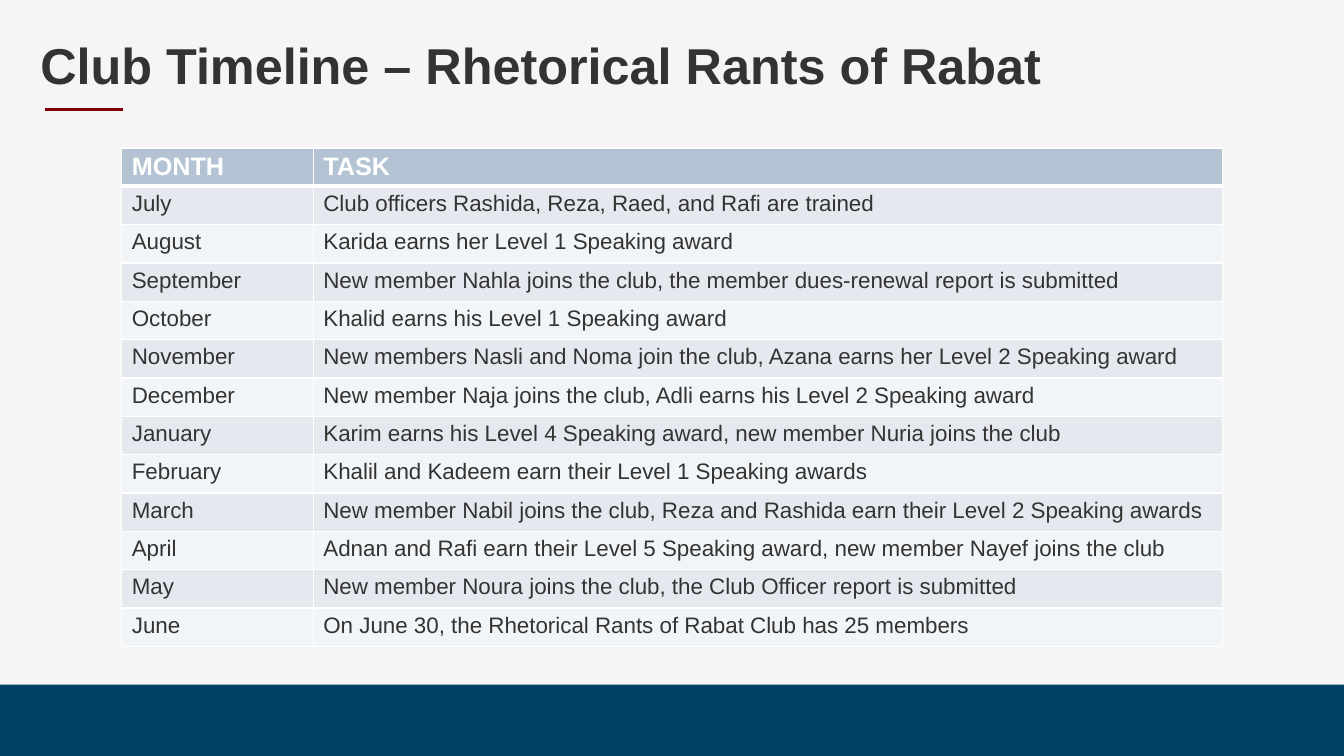
"""Build the club timeline slide."""
from lxml import etree
from pptx import Presentation
from pptx import util as u
from pptx.dml.color import RGBColor
from pptx.enum import shapes, text
from pptx.oxml import ns

PAPER = RGBColor(0xF5, 0xF5, 0xF5)
NAVY = RGBColor(0x00, 0x41, 0x65)
MAROON = RGBColor(0x80, 0x00, 0x00)
INK = RGBColor(0x33, 0x33, 0x33)
WHITE = RGBColor(0xFF, 0xFF, 0xFF)
STEEL = RGBColor(0xB3, 0xC3, 0xD3)
BANDS = RGBColor(0xF2, 0xF5, 0xF7), RGBColor(0xE5, 0xE9, 0xEF)

WIDE, HIGH = 960, 540
COLS = 136.8, 649.4
ROW = 27.4
TITLE = {"size": u.Pt(36), "bold": True, "color": INK}
HEAD = {"size": u.Pt(18), "bold": True, "color": WHITE}
BODY = {"size": u.Pt(16), "bold": False, "color": INK}

TASKS = [
    ("MONTH", "TASK"),
    ("July", "Club officers Rashida, Reza, Raed, and Rafi are trained"),
    ("August", "Karida earns her Level 1 Speaking award"),
    ("September", "New member Nahla joins the club, the member dues-renewal report is submitted"),
    ("October", "Khalid earns his Level 1 Speaking award"),
    ("November", "New members Nasli and Noma join the club, Azana earns her Level 2 Speaking award"),
    ("December", "New member Naja joins the club, Adli earns his Level 2 Speaking award"),
    ("January", "Karim earns his Level 4 Speaking award, new member Nuria joins the club"),
    ("February", "Khalil and Kadeem earn their Level 1 Speaking awards"),
    ("March", "New member Nabil joins the club, Reza and Rashida earn their Level 2 Speaking awards"),
    ("April", "Adnan and Rafi earn their Level 5 Speaking award, new member Nayef joins the club"),
    ("May", "New member Noura joins the club, the Club Officer report is submitted"),
    ("June", "On June 30, the Rhetorical Rants of Rabat Club has 25 members"),
]


def style(para, form):
    """Apply a dict of font values to a paragraph."""
    para.font.name = "Arial"
    for key, value in form.items():
        if key == "color":
            para.font.color.rgb = value
        else:
            setattr(para.font, key, value)


def add_bar(slide, top):
    """Fill the foot of the slide with a plain bar."""
    bar = slide.shapes.add_shape(shapes.MSO_SHAPE.RECTANGLE, 0, u.Pt(top),
                                 u.Pt(WIDE), u.Pt(HIGH - top))
    bar.shadow.inherit = False
    bar.fill.solid()
    bar.fill.fore_color.rgb = NAVY
    bar.line.fill.background()


def add_rule(slide, left, top, width):
    """Draw the short accent line under the title."""
    rule = slide.shapes.add_connector(
        shapes.MSO_CONNECTOR.STRAIGHT, u.Pt(left), u.Pt(top),
        u.Pt(left + width), u.Pt(top))
    rule.line.color.rgb = MAROON
    rule.line.width = u.Pt(2.25)
    etree.SubElement(rule._element.spPr, ns.qn("a:effectLst"))


def set_title(slide, words):
    """Place and format the title."""
    title = slide.shapes.title
    box = {"left": 21.6, "top": 23, "width": 917.3, "height": 51.1}
    for key, value in box.items():
        setattr(title, key, u.Pt(value))
    frame = title.text_frame
    frame.text = words
    frame.auto_size = text.MSO_AUTO_SIZE.NONE
    frame.vertical_anchor = text.MSO_ANCHOR.MIDDLE
    para = frame.paragraphs[0]
    para.alignment = text.PP_ALIGN.LEFT
    para.line_spacing = 0.9
    style(para, TITLE)


def add_edge(cell, side, width):
    """Add one white border to a cell."""
    props = cell._tc.get_or_add_tcPr()
    edge = etree.SubElement(props, ns.qn(f"a:ln{side}"), w=str(u.Pt(width)))
    fill = etree.SubElement(edge, ns.qn("a:solidFill"))
    etree.SubElement(fill, ns.qn("a:srgbClr"), val=str(WHITE))


def fill_cell(cell, words, row):
    """Write, border and fill one cell by its row number."""
    cell.text = words
    style(cell.text_frame.paragraphs[0], BODY if row else HEAD)
    thick = {"T": 1, "B": 0}
    for side in "LRTB":
        add_edge(cell, side, 3 if thick.get(side) == row else 1)
    cell.fill.solid()
    cell.fill.fore_color.rgb = BANDS[row % 2] if row else STEEL


def add_tasks(slide, left, top):
    """Add the table of months and tasks."""
    grid = slide.shapes.add_table(
        len(TASKS), len(COLS), u.Pt(left), u.Pt(top),
        u.Pt(sum(COLS)), u.Pt(ROW * len(TASKS))).table
    for col, width in zip(grid.columns, COLS):
        col.width = u.Pt(width)
    for row, entry in enumerate(TASKS):
        grid.rows[row].height = u.Pt(ROW)
        for col, words in enumerate(entry):
            fill_cell(grid.cell(row, col), words, row)


def main():
    """Build and save the slide."""
    deck = Presentation()
    deck.slide_width, deck.slide_height = u.Pt(WIDE), u.Pt(HIGH)
    slide = deck.slides.add_slide(deck.slide_layouts[5])
    slide.background.fill.solid()
    slide.background.fill.fore_color.rgb = PAPER
    add_bar(slide, 489)
    add_rule(slide, 32, 78, 56)
    set_title(slide, "Club Timeline – Rhetorical Rants of Rabat")
    add_tasks(slide, 87, 105.7)
    deck.save("out.pptx")


if __name__ == "__main__":
    main()
